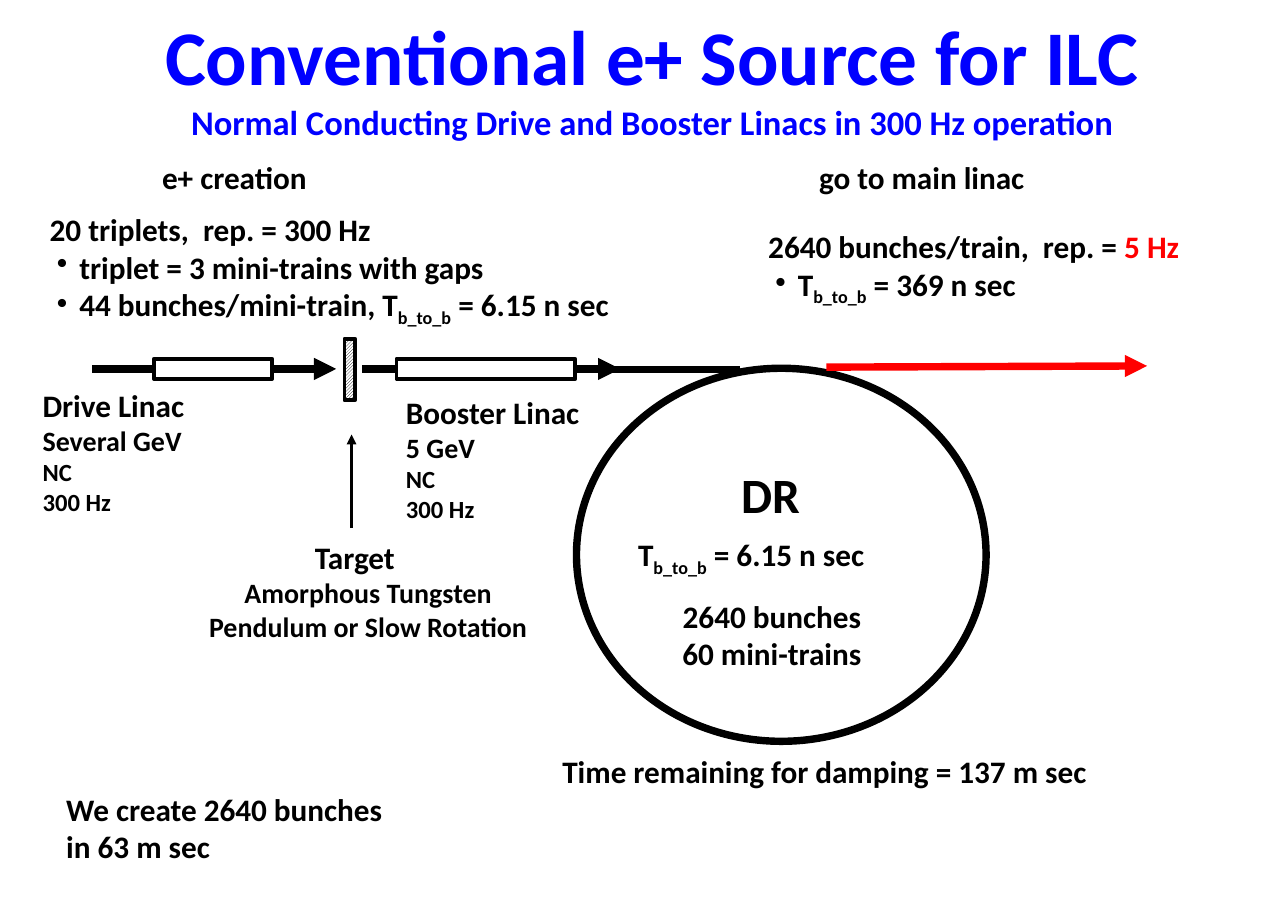
from lxml import etree
from pptx import Presentation
from pptx import util as u
from pptx.dml.color import RGBColor
from pptx.enum import dml, shapes, text
from pptx.oxml.ns import qn

INK = {"black": "000000", "white": "FFFFFF", "blue": "0000FF", "red": "FF0000"}
FONT = "Calibri"
SUB = "b_to_b"
HOT = "5 Hz"


def tint(name):
    """Return the named colour."""
    return RGBColor.from_string(INK[name])


def write(slide, box, lines, ink="black", align=text.PP_ALIGN.LEFT):
    """Add text from (words, size) lines; bars split runs, a leading bullet sets a list item."""
    area = slide.shapes.add_textbox(*map(u.Inches, box))
    frame = area.text_frame
    frame.word_wrap = True
    frame.auto_size = text.MSO_AUTO_SIZE.SHAPE_TO_FIT_TEXT
    frame.margin_left = frame.margin_right = u.Inches(0.11)
    frame.margin_top = frame.margin_bottom = u.Inches(0.05)
    frame.text = "\n".join("" for _ in lines)
    for para, (words, size) in zip(frame.paragraphs, lines):
        para.alignment = align
        if words.startswith("•"):
            props = para._p.get_or_add_pPr()
            props.set("marL", str(u.Inches(0.25)))
            props.set("indent", str(u.Inches(-0.19)))
            etree.SubElement(props, qn("a:buChar")).set("char", "•")
            words = words[1:].strip()
        for part in words.split("|"):
            run = para.add_run()
            run.text = part
            font = run.font
            font.name, font.size, font.bold = FONT, u.Pt(size), True
            font.color.rgb = tint("red" if part == HOT else ink)
            if part == SUB:
                font._element.set("baseline", "-25000")


def link(slide, start, end, ink="black", width=4.5, arrow=True):
    """Draw a straight line, with an arrowhead at its end if asked."""
    line = slide.shapes.add_connector(
        shapes.MSO_CONNECTOR.STRAIGHT, *map(u.Inches, (*start, *end)))
    line.line.color.rgb = tint(ink)
    line.line.width = u.Pt(width)
    props = line._element.spPr
    if arrow:
        etree.SubElement(props.find(qn("a:ln")), qn("a:tailEnd")).set("type", "triangle")
    etree.SubElement(props, qn("a:effectLst"))


def block(slide, kind, box, width=2.25):
    """Add a white shape with a black outline."""
    item = slide.shapes.add_shape(kind, *map(u.Inches, box))
    item.shadow.inherit = False
    item.fill.solid()
    item.fill.fore_color.rgb = tint("white")
    item.line.color.rgb = tint("black")
    item.line.width = u.Pt(width)
    return item


def header(slide, box):
    """Write the title and subtitle."""
    write(slide, box, [
        ("Conventional e+ Source for ILC", 47),
        ("Normal Conducting Drive and Booster Linacs in 300 Hz operation", 21),
    ], "blue", text.PP_ALIGN.CENTER)


def ring(slide, box):
    """Draw the damping ring with its labels and the way in and out."""
    x, y, w, h = box
    block(slide, shapes.MSO_SHAPE.OVAL, box, 4.5)
    link(slide, (x + 2.11, y - 0.01), (x + 4.82, y - 0.02), "red")
    link(slide, (x + 0.17, y + 0.01), (x + 1.38, y + 0.01), arrow=False)
    write(slide, (x + 1.28, y + 0.76, 1.17, 0.61), [("DR", 30)])
    write(slide, (x + 0.41, y + 1.36, 2.86, 0.43), [(f"T|{SUB}| = 6.15 n sec", 19)])
    write(slide, (x + 0.5, y + 1.88, 2.3, 0.75),
          [("2640 bunches", 19), ("60 mini-trains", 19)], align=text.PP_ALIGN.CENTER)
    write(slide, (x - 0.23, y + h + 0.04, 6.15, 0.43),
          [("Time remaining for damping = 137 m sec", 19)])


def linac(slide, box, beam, label, lines):
    """Draw a linac on its beam line, with a label below."""
    x, y, w, h = box
    mid = y + h / 2
    link(slide, (beam[0], mid), (beam[1], mid))
    block(slide, shapes.MSO_SHAPE.RECTANGLE, box)
    write(slide, (*label, 2.5, 1.22), list(zip(lines, (19, 17, 15, 15))))


def target(slide, box):
    """Draw the hatched target, its pointer and its label."""
    x, y, w, h = box
    plate = block(slide, shapes.MSO_SHAPE.RECTANGLE, box)
    plate.fill.patterned()
    plate.fill.pattern = dml.MSO_PATTERN.LIGHT_UPWARD_DIAGONAL
    plate.fill.fore_color.rgb = tint("black")
    plate.fill.back_color.rgb = tint("white")
    link(slide, (x + 0.06, y + 1.6), (x + 0.06, y + 0.81), width=1.5)
    write(slide, (x - 0.36, y + 1.64, 1.19, 0.43), [("Target", 19)])
    write(slide, (x - 2.37, y + 1.95, 5.14, 0.68),
          [("Amorphous Tungsten", 17), ("Pendulum or Slow Rotation", 17)],
          align=text.PP_ALIGN.CENTER)


def stage(slide, box, head, lines):
    """Write a stage heading and the bunch pattern below it."""
    x, y, w, h = box
    write(slide, (x + head[0], head[1], 3, 0.43), [(head[2], 19)])
    write(slide, box, [(line, 19) for line in lines])


def main():
    """Build and save the slide."""
    deck = Presentation()
    deck.slide_width, deck.slide_height = u.Inches(10.88), u.Inches(7.76)
    slide = deck.slides.add_slide(deck.slide_layouts[6])
    ring(slide, (4.87, 3.11, 3.46, 3.15))
    stage(slide, (0.31, 1.73, 6.05, 1.07), (0.95, 1.29, "e+ creation"), [
        "20 triplets,  rep. = 300 Hz",
        "• triplet = 3 mini-trains with gaps",
        f"• 44 bunches/mini-train, T|{SUB}| = 6.15 n sec",
    ])
    stage(slide, (6.38, 1.87, 4.36, 0.75), (0.43, 1.29, "go to main linac"), [
        f"2640 bunches/train,  rep. = |{HOT}",
        f"• T|{SUB}| = 369 n sec",
    ])
    linac(slide, (1.3, 3.03, 1, 0.17), (0.78, 2.84), (0.25, 3.21),
          ("Drive Linac", "Several GeV", "NC", "300 Hz"))
    target(slide, (2.91, 2.86, 0.09, 0.52))
    linac(slide, (3.35, 3.03, 1.51, 0.17), (3.06, 5.24), (3.32, 3.27),
          ("Booster Linac", "5 GeV", "NC", "300 Hz"))
    write(slide, (0.45, 6.62, 3.54, 0.75),
          [("We create 2640 bunches", 19), ("in 63 m sec", 19)])
    header(slide, (0.67, 0.02, 9.68, 1.25))
    deck.save("out.pptx")


if __name__ == "__main__":
    main()
